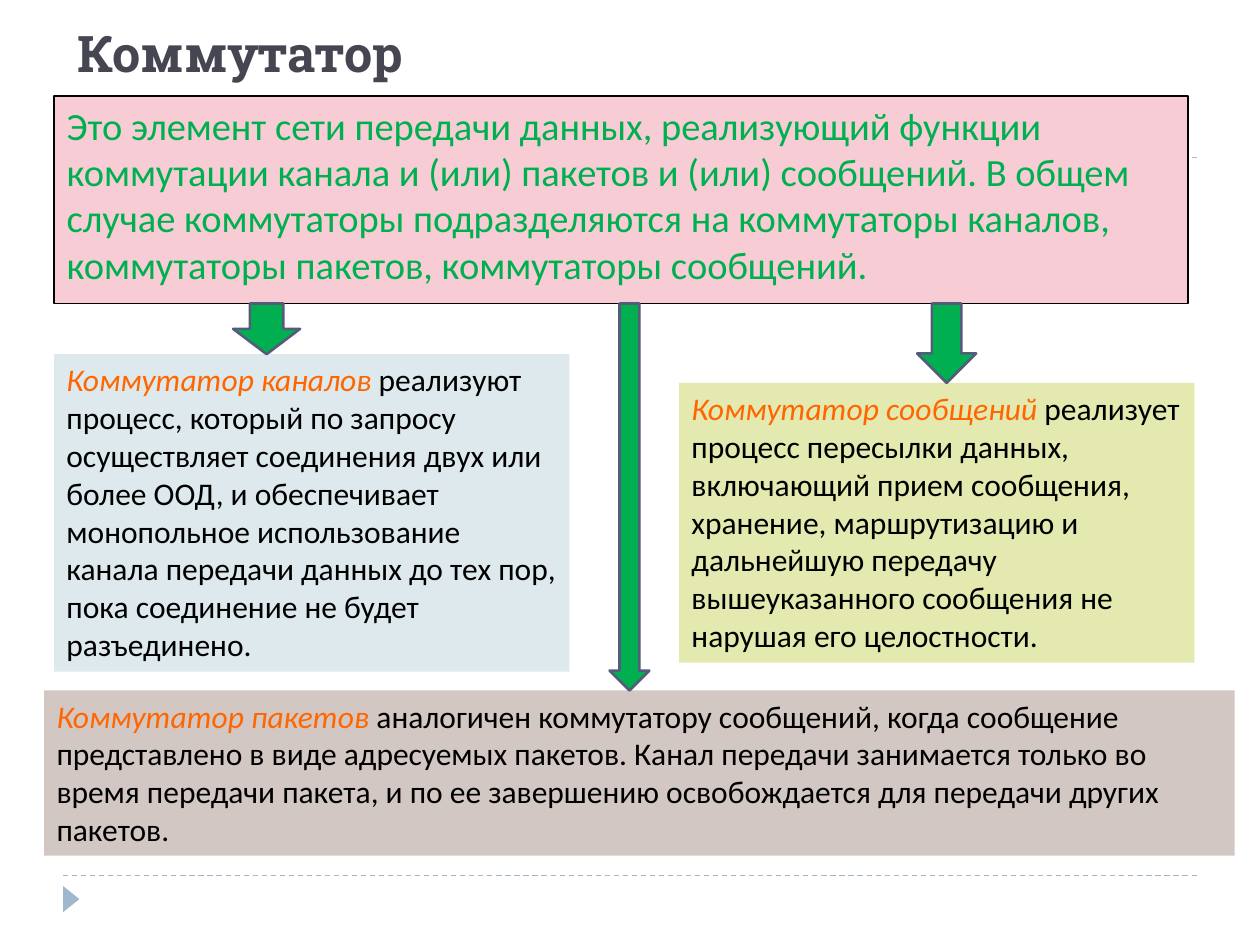
from lxml import etree
from pptx import Presentation
from pptx import util as u
from pptx.dml.color import RGBColor
from pptx.enum import dml, shapes, text
from pptx.oxml.ns import qn


def color(value):
    return RGBColor.from_string(value)


def place(shape, left, top, width, height):
    shape.left, shape.top = u.Cm(left), u.Cm(top)
    shape.width, shape.height = u.Cm(width), u.Cm(height)


deck = Presentation()
deck.slide_width, deck.slide_height = u.Cm(25.4), u.Cm(19.05)
page = deck.slides.add_slide(deck.slide_layouts[1])
title, definition = page.shapes.title, page.placeholders[1]

# Dashed rules, kept behind the text
for y in (3.18, 17.65):
    rule = page.shapes.add_connector(
        shapes.MSO_CONNECTOR.STRAIGHT, u.Cm(1.27), u.Cm(y), u.Cm(24.13), u.Cm(y))
    rule.line.color.rgb = color("9FB8CD")
    rule.line.width = u.Pt(0.75)
    rule.line.dash_style = dml.MSO_LINE.DASH
    etree.SubElement(rule._element.spPr, qn("a:effectLst"))
    title._element.addprevious(rule._element)

# Corner marker
marker = page.shapes.add_shape(
    shapes.MSO_SHAPE.ISOSCELES_TRIANGLE, u.Cm(1.17), u.Cm(17.96), u.Cm(0.53), u.Cm(0.33))
marker.rotation = 90
marker.shadow.inherit = False
marker.fill.solid()
marker.fill.fore_color.rgb = color("9FB8CD")
marker.line.fill.background()

# Title
place(title, 1.3, 0.91, 22.86, 0.89)
title.text_frame.text = "Коммутатор"
title.text_frame.auto_size = text.MSO_AUTO_SIZE.NONE
title.text_frame.vertical_anchor = text.MSO_ANCHOR.BOTTOM
para = title.text_frame.paragraphs[0]
para.alignment = text.PP_ALIGN.LEFT
para.font.name, para.font.size, para.font.bold = "Roboto Slab", u.Pt(28.8), True
para.font.color.rgb = color("464653")

# Definition
place(definition, 1.09, 1.93, 22.86, 4.19)
definition.fill.solid()
definition.fill.fore_color.rgb = color("F8CCD5")
definition.line.color.rgb = color("000000")
definition.line.width = u.Pt(1)
definition.text_frame.text = (
    "Это элемент сети передачи данных, реализующий функции коммутации канала "
    "и (или) пакетов и (или) сообщений. В общем случае коммутаторы подразделяются "
    "на коммутаторы каналов, коммутаторы пакетов, коммутаторы сообщений.")
definition.text_frame.auto_size = text.MSO_AUTO_SIZE.NONE
para = definition.text_frame.paragraphs[0]
para.space_before = u.Pt(6)
para.font.name, para.font.size = "Calibri", u.Pt(22)
para.font.color.rgb = color("00B050")
properties = para._p.get_or_add_pPr()
properties.set("marL", "0")
properties.set("indent", "0")
# The bullet setting has to stand before the default run properties
properties.find(qn("a:defRPr")).addprevious(etree.Element(qn("a:buNone")))

# Kinds of switch: position, fill, term, explanation
kinds = [
    ((1.09, 7.14, 10.39, 6.4), "DDE9EC", "Коммутатор каналов ",
     "реализуют процесс, который по запросу осуществляет соединения двух или более "
     "ООД, и обеспечивает монопольное использование канала передачи данных до тех "
     "пор, пока соединение не будет разъединено."),
    ((13.69, 7.72, 10.39, 5.64), "E4E9AF", "Коммутатор сообщений ",
     "реализует процесс пересылки данных, включающий прием сообщения, хранение, "
     "маршрутизацию и дальнейшую передачу вышеуказанного сообщения не нарушая его "
     "целостности."),
    ((0.89, 13.92, 24, 3.33), "D2C7C3", "Коммутатор пакетов ",
     "аналогичен коммутатору сообщений, когда сообщение представлено в виде "
     "адресуемых пакетов. Канал передачи занимается только во время передачи пакета, "
     "и по ее завершению освобождается для передачи других пакетов."),
]
for position, fill, term, explanation in kinds:
    box = page.shapes.add_textbox(0, 0, 0, 0)
    place(box, *position)
    box.fill.solid()
    box.fill.fore_color.rgb = color(fill)
    box.text_frame.word_wrap = True
    box.text_frame.auto_size = text.MSO_AUTO_SIZE.SHAPE_TO_FIT_TEXT
    para = box.text_frame.paragraphs[0]
    para.font.name, para.font.size = "Calibri", u.Pt(18)
    for words, ink, italic in ((term, "FF6600", True), (explanation, "000000", False)):
        span = para.add_run()
        span.text = words
        span.font.italic = italic
        span.font.color.rgb = color(ink)

# Arrows from the definition down to each kind: left, width, end
for left, width, end in ((4.7, 1.35, 7.14), (18.49, 1.19, 7.72), (12.29, 0.8, 13.92)):
    arrow = page.shapes.add_shape(shapes.MSO_SHAPE.DOWN_ARROW, 0, 0, 0, 0)
    place(arrow, left, 6.12, width, end - 6.12)
    arrow.shadow.inherit = False
    arrow.fill.solid()
    arrow.fill.fore_color.rgb = color("00B050")
    arrow.line.color.rgb = color("545C79")
    arrow.line.width = u.Pt(1.5)

deck.save("out.pptx")
